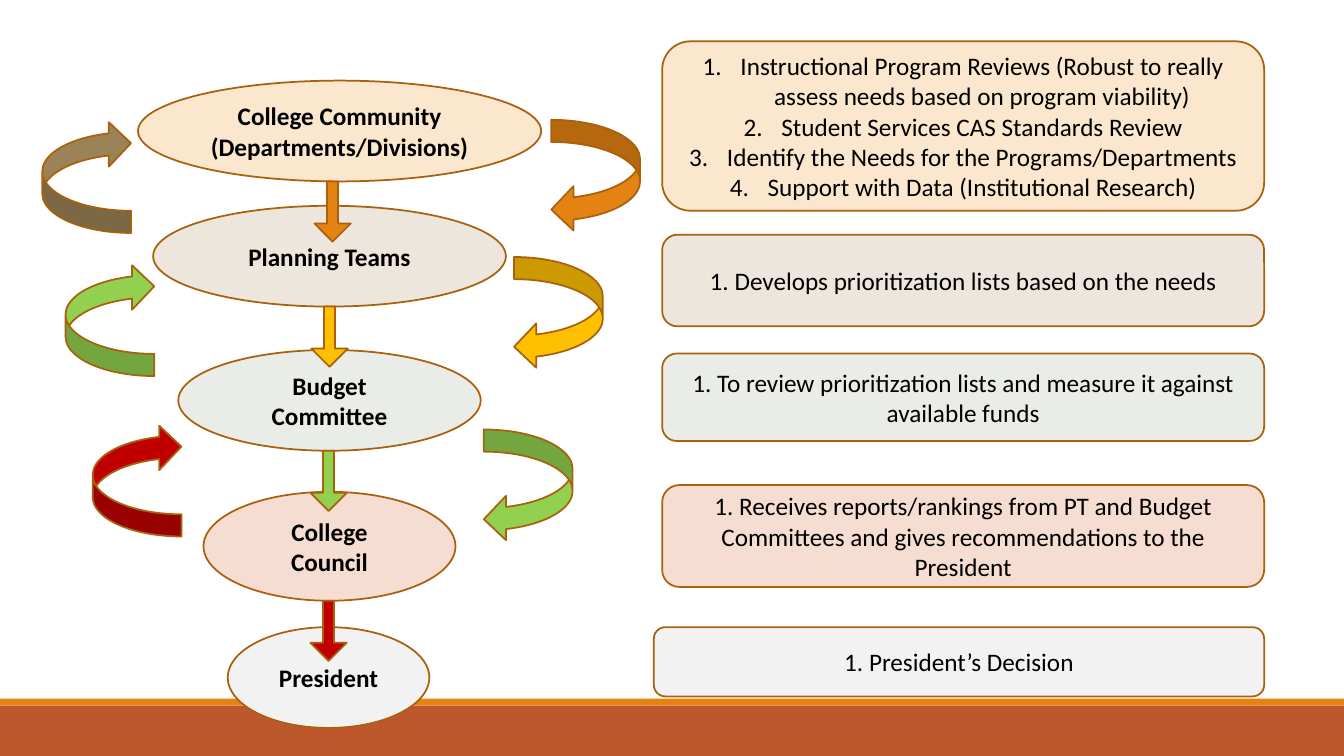
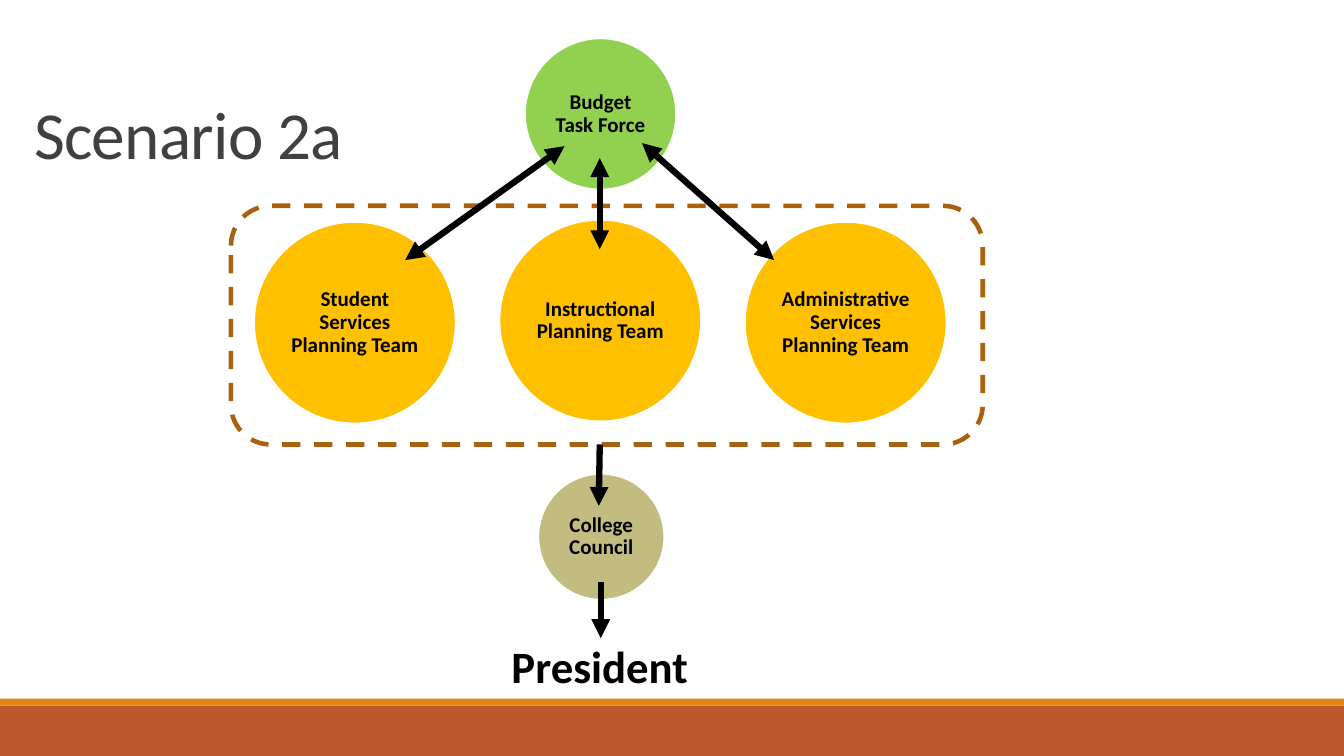
"""Build two slides on a college planning and budgeting process."""
from collections import namedtuple

from lxml.etree import SubElement
from pptx import Presentation
from pptx.dml.color import RGBColor
from pptx.enum.dml import MSO_LINE
from pptx.enum.shapes import MSO_CONNECTOR, MSO_SHAPE as SHP
from pptx.enum.text import MSO_ANCHOR, PP_ALIGN
from pptx.oxml.ns import qn
from pptx.util import Pt

WIDTH, HEIGHT = 960, 540
FONT = "Calibri"
BLACK = RGBColor(0x00, 0x00, 0x00)
WHITE = RGBColor(0xFF, 0xFF, 0xFF)
TITLE_GREY = RGBColor(0x40, 0x40, 0x40)
RUST = RGBColor(0xBD, 0x58, 0x2C)
ORANGE = RGBColor(0xE4, 0x83, 0x12)
BROWN = RGBColor(0xA9, 0x61, 0x0D)
TAUPE = RGBColor(0x9B, 0x83, 0x57)
GOLD = RGBColor(0xFF, 0xC0, 0x00)
GREEN = RGBColor(0x92, 0xD0, 0x50)
RED = RGBColor(0xC0, 0x00, 0x00)
KHAKI = RGBColor(0xC2, 0xBC, 0x80)
PEACH = RGBColor(0xFB, 0xE6, 0xCE)
SAND = RGBColor(0xEC, 0xE6, 0xDD)
SAGE = RGBColor(0xEA, 0xEC, 0xE7)
BLUSH = RGBColor(0xF5, 0xDD, 0xD2)
PALE_GREY = RGBColor(0xF2, 0xF2, 0xF2)

Box = namedtuple("Box", "x y w h")
Stage = namedtuple("Stage", "name box fill panel tasks")
Flow = namedtuple("Flow", "axis color left left_color right")

PANEL_X, PANEL_W = 473, 430
STAGES = (
    Stage("College Community (Departments/Divisions)", Box(98.6, 57.6, 288, 72), PEACH,
          Box(PANEL_X, 29.5, PANEL_W, 121),
          ("Instructional Program Reviews (Robust to really assess needs based on program viability)",
           "Student Services CAS Standards Review",
           "Identify the Needs for the Programs/Departments",
           "Support with Data (Institutional Research)")),
    Stage("Planning Teams", Box(109.4, 147, 252, 72), SAND,
          Box(PANEL_X, 167.6, PANEL_W, 65.5),
          ("1. Develops prioritization lists based on the needs",)),
    Stage("Budget Committee", Box(127.4, 250, 216, 72), SAGE,
          Box(PANEL_X, 252.5, PANEL_W, 62.5),
          ("1. To review prioritization lists and measure it against available funds",)),
    Stage("College Council", Box(145.4, 351.3, 180, 77.8), BLUSH,
          Box(PANEL_X, 346.5, PANEL_W, 72.7),
          ("1. Receives reports/rankings from PT and Budget Committees and gives "
           "recommendations to the President",)),
    Stage("President", Box(162.7, 448, 144, 72), PALE_GREY,
          Box(467, 448, 436, 49.5), ("1. President’s Decision",)),
)
FLOWS = (
    Flow(237.6, ORANGE, (-5, 28.8), TAUPE, (7.2, 28)),
    Flow(235.4, GOLD, (0.8, 41.6), GREEN, (5.8, 36.6)),
    Flow(234.7, GREEN, (2.2, 53.2), RED, (2.2, 56.8)),
    Flow(234.7, RED, None, None, None),
)
LOOP_W, LOOP_H = 63.4, 80
DOWN_W, DOWN_H = 26, 43


def add_shape(s, kind, box, fill=None, line=None, width=1.25):
    """Add a preset shape without a shadow."""
    sp = s.shapes.add_shape(kind, *map(Pt, box))
    sp.shadow.inherit = False
    if fill is None:
        sp.fill.background()
    else:
        sp.fill.solid()
        sp.fill.fore_color.rgb = fill
    if line is None:
        sp.line.fill.background()
    else:
        sp.line.color.rgb = line
        sp.line.width = Pt(width)
    return sp


def set_text(sp, texts, size, color=BLACK, bold=False, align=PP_ALIGN.CENTER,
             anchor=MSO_ANCHOR.MIDDLE, spacing=None, inset=None):
    """Write one paragraph per text in a shared style."""
    tf = sp.text_frame
    tf.word_wrap = True
    tf.vertical_anchor = anchor
    if inset is not None:
        tf.margin_left = tf.margin_right = tf.margin_top = tf.margin_bottom = Pt(inset)
    for i, text in enumerate(texts):
        p = tf.add_paragraph() if i else tf.paragraphs[0]
        p.text = text
        p.alignment = align
        p.line_spacing = spacing
        p.font.name = FONT
        p.font.size = Pt(size)
        p.font.bold = bold
        p.font.color.rgb = color
    return tf


def number_paragraphs(tf, indent=27):
    """Number the paragraphs with a hanging indent."""
    for p in tf.paragraphs:
        pPr = p._p.get_or_add_pPr()
        pPr.set("marL", str(Pt(indent)))
        pPr.set("indent", str(-Pt(indent)))
        bullet = pPr.makeelement(qn("a:buAutoNum"), {"type": "arabicPeriod"})
        pPr.insert_element_before(bullet, "a:tabLst", "a:defRPr", "a:extLst")


def add_arrow(s, start, end, both=False):
    """Draw a thick black arrow, optionally with two heads."""
    cn = s.shapes.add_connector(MSO_CONNECTOR.STRAIGHT, *map(Pt, start + end))
    cn.line.color.rgb = BLACK
    cn.line.width = Pt(4.5)
    ln = cn.line._get_or_add_ln()
    for tag in ("a:headEnd", "a:tailEnd") if both else ("a:tailEnd",):
        SubElement(ln, qn(tag), type="triangle")
    SubElement(cn._element.spPr, qn("a:effectLst"))


def new_slide(prs):
    """Add a blank slide with the two footer bands."""
    s = prs.slides.add_slide(prs.slide_layouts[6])
    add_shape(s, SHP.RECTANGLE, Box(0, 504, WIDTH, 36), RUST)
    add_shape(s, SHP.RECTANGLE, Box(0, 499, WIDTH, 5), ORANGE)
    return s


def add_title(s, box, text):
    """Place the slide title at the bottom of its box."""
    tf = set_text(s.shapes.add_textbox(*map(Pt, box)), [text], 48, TITLE_GREY,
                  align=PP_ALIGN.LEFT, anchor=MSO_ANCHOR.BOTTOM, spacing=0.85)
    tf.paragraphs[0].runs[0].font._element.set("spc", "-50")


def add_stage(s, stage):
    """Draw a stage ellipse and the panel listing its tasks."""
    sp = add_shape(s, SHP.OVAL, stage.box, stage.fill, BROWN)
    set_text(sp, [stage.name], 18, bold=True)
    panel = add_shape(s, SHP.ROUNDED_RECTANGLE, stage.panel, stage.fill, BROWN)
    tf = set_text(panel, stage.tasks, 18)
    if len(stage.tasks) > 1:
        number_paragraphs(tf)


def add_flow(s, box, flow):
    """Draw the arrow below a stage and the loops at its sides."""
    down = Box(flow.axis - DOWN_W / 2, box.y + box.h, DOWN_W, DOWN_H)
    sp = add_shape(s, SHP.DOWN_ARROW, down, flow.color, BROWN)
    sp.adjustments[0] = 0.3
    if flow.left is None:
        return
    loops = ((box.x - LOOP_W, flow.left, flow.left_color, 180),
             (box.x + box.w, flow.right, flow.color, 0))
    for x, (dx, dy), color, turn in loops:
        loop = Box(x + dx, box.y + dy, LOOP_W, LOOP_H)
        sp = add_shape(s, SHP.CURVED_LEFT_ARROW, loop, color, BROWN)
        sp.rotation = turn


def add_circle(s, cx, cy, size, fill, text):
    """Draw a labelled circle around a centre."""
    box = Box(cx - size / 2, cy - size / 2, size, size)
    sp = add_shape(s, SHP.OVAL, box, fill, WHITE)
    set_text(sp, [text], 15, bold=True, spacing=0.9, inset=1.4)


def add_teams(s, box):
    """Draw the dashed frame and the three planning teams inside it."""
    for i, team in enumerate(("Student Services", "Instructional", "Administrative Services")):
        cy = box.y + (82 if i == 1 else 83.5)
        add_circle(s, box.x + 88.5 + 175.3 * i, cy, 144, GOLD, f"{team} Planning Team")
    sp = add_shape(s, SHP.ROUNDED_RECTANGLE, box, line=BROWN, width=3.25)
    sp.line.dash_style = MSO_LINE.DASH


def build_process(prs):
    """Build the slide showing the five stages."""
    s = new_slide(prs)
    for stage in STAGES:
        add_stage(s, stage)
    for stage, flow in zip(STAGES, FLOWS):
        add_flow(s, stage.box, flow)


def build_scenario(prs):
    """Build the slide showing the task force scenario."""
    s = new_slide(prs)
    add_title(s, Box(17.3, 13, 792, 114.5), "Scenario 2a")
    add_circle(s, 429, 81.4, 108, GREEN, "Budget Task Force")
    add_teams(s, Box(165, 147, 537, 170.5))
    add_circle(s, 429.5, 383.4, 90, KHAKI, "College Council")
    president = s.shapes.add_textbox(*map(Pt, Box(340, 438, 177, 80)))
    set_text(president, ["President"], 32, bold=True, spacing=0.9, inset=13.5)
    for start, end in (((403.2, 104.4), (289.4, 185.8)),
                       ((428.4, 113), (428.4, 178)),
                       ((458.6, 102.2), (553, 185.8))):
        add_arrow(s, start, end, both=True)
    add_arrow(s, (428.4, 317.5), (427.7, 361.4))
    add_arrow(s, (429.1, 415.4), (429.1, 455.8))


def main():
    """Create and save the presentation."""
    prs = Presentation()
    prs.slide_width, prs.slide_height = Pt(WIDTH), Pt(HEIGHT)
    build_process(prs)
    build_scenario(prs)
    prs.save("out.pptx")


if __name__ == "__main__":
    main()
